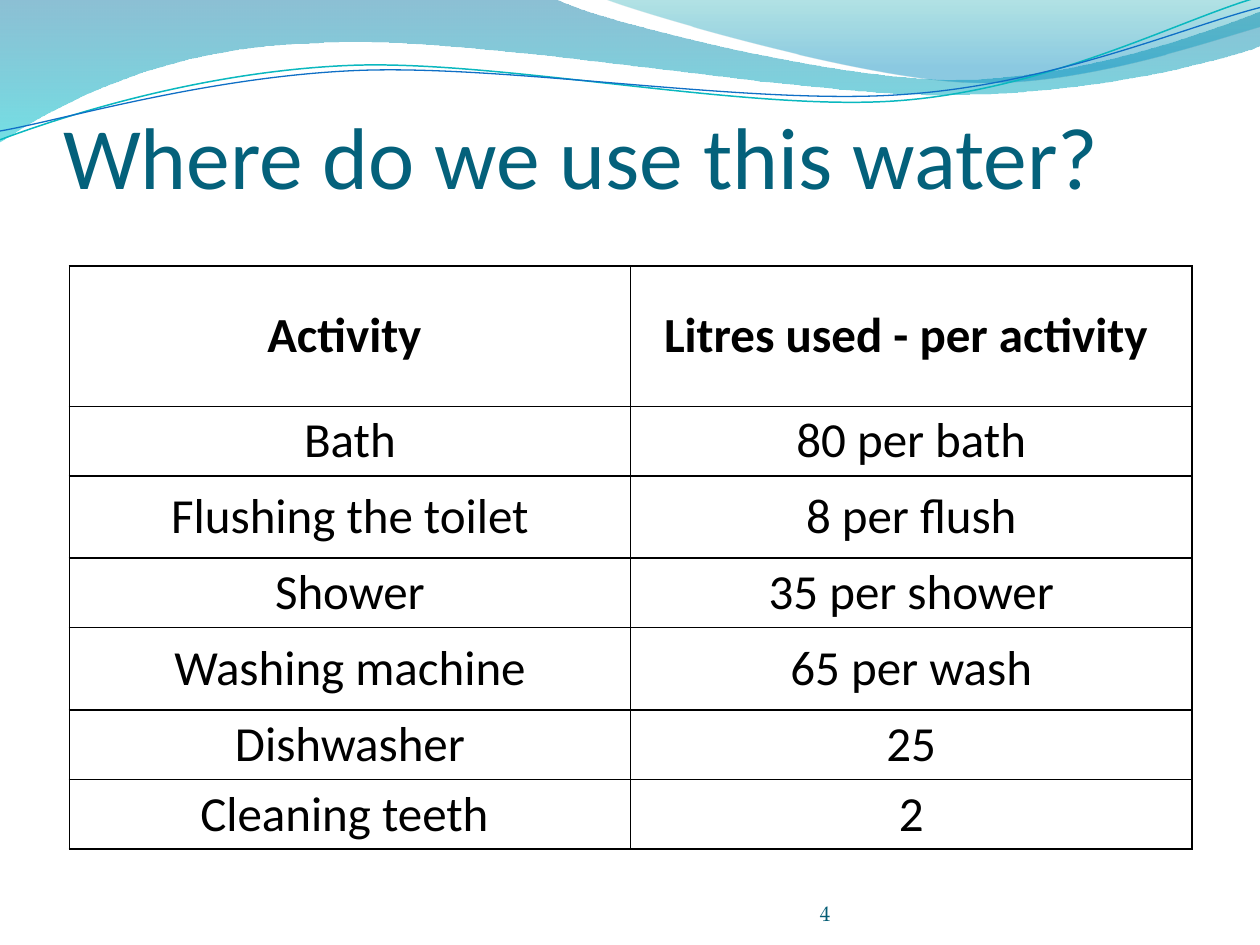
from pptx import Presentation
from pptx.dml.color import RGBColor
from pptx.enum.text import MSO_ANCHOR, MSO_AUTO_SIZE, PP_ALIGN
from pptx.oxml.ns import qn
from pptx.util import Inches, Pt
from lxml.etree import SubElement

BLACK = RGBColor(0x00, 0x00, 0x00)
TITLE_TEAL = RGBColor(0x04, 0x61, 0x7B)
NUMBER_TEAL = RGBColor(0x04, 0x5D, 0x75)
DEEP_BLUE = RGBColor(0x00, 0x74, 0xA1)
AQUA = RGBColor(0x00, 0xC6, 0xCF)
SEA_GREEN = RGBColor(0x00, 0xA1, 0xA9)
SKY_BLUE = RGBColor(0x00, 0x8B, 0xBF)
LINE_AQUA = RGBColor(0x0A, 0xB8, 0xBF)
LINE_BLUE = RGBColor(0x0F, 0x6F, 0xC6)

# Outlines in inches: a pair is a straight step, a six is a Bezier curve.
# Gradient stops: position, colour, opacity in percent.
BANDS = [
    ([(0, 0), (4.4, -0.01), (4.76, 0.17, 6.64, 0.63, 7.58, 0.63),
      (8.53, 0.63, 9.58, 0.26, 10, 0.09), (10.01, 0.36),
      (9.83, 0.44, 8.7, 0.76, 7.46, 0.75), (6.22, 0.75, 3.82, 0.28, 2.57, 0.34),
      (1.29, 0.36, 0.46, 0.83, -0.01, 1.13)],
     [(0, DEEP_BLUE, 45), (1, AQUA, 55)]),
    ([(4.79, -0.01), (5.09, 0.11, 6.82, 0.62, 7.69, 0.65),
      (8.56, 0.69, 9.61, 0.32, 10, 0.21), (10, 0)],
     [(0, SEA_GREEN, 30), (0.8, SKY_BLUE, 45)]),
]
LINES = [
    ([(0, 1.11), (0.48, 0.93, 1.58, 0.57, 2.77, 0.52),
      (3.95, 0.47, 5.93, 0.89, 7.13, 0.8), (8.33, 0.71, 9.38, 0.15, 9.98, -0.02)],
     LINE_AQUA, 0.85),
    ([(0, 1.04), (0.47, 0.96, 1.64, 0.61, 2.83, 0.56),
      (4.03, 0.51, 5.97, 0.84, 7.17, 0.75), (8.36, 0.67, 9.41, 0.21, 10, 0.06)],
     LINE_BLUE, 0.75),
]

ROWS = [
    ("Activity ", "Litres used - per activity "),
    ("Bath", "80 per bath"),
    ("Flushing the toilet", "8 per flush"),
    ("Shower", "35 per shower"),
    ("Washing machine", "65 per wash"),
    ("Dishwasher", "25"),
    ("Cleaning teeth ", "2"),
]
ROW_HEIGHTS = [1.11, 0.55, 0.65, 0.55, 0.65, 0.55, 0.55]


def add_outline(s, outline, close):
    """Build the outline through its end points, then bend the curved steps."""
    ends = [(Inches(part[-2]), Inches(part[-1])) for part in outline]
    builder = s.shapes.build_freeform(*ends[0])
    builder.add_line_segments(ends[1:], close=close)
    sp = builder.convert_to_shape()
    sp.shadow.inherit = False
    steps = list(sp.element.iter(qn("a:lnTo")))
    for step, part in zip(steps, outline[1:]):
        if len(part) == 6:
            curve = step.makeelement(qn("a:cubicBezTo"), {})
            for x, y in zip(part[::2], part[1::2]):
                SubElement(curve, qn("a:pt"), x=str(Inches(x) - sp.left),
                           y=str(Inches(y) - sp.top))
            step.getparent().replace(step, curve)
    return sp


def add_waves(s):
    # Translucent bands
    for outline, stops in BANDS:
        sp = add_outline(s, outline, True)
        sp.line.fill.background()
        sp.fill.gradient()
        sp.fill.gradient_angle = 270
        for stop, (position, color, _) in zip(sp.fill.gradient_stops, stops):
            stop.position = position
            stop.color.rgb = color
        colors = list(sp.element.spPr.iter(qn("a:srgbClr")))
        for clr, (_, _, opacity) in zip(colors, stops):
            SubElement(clr, qn("a:alpha"), val=str(opacity * 1000))
    # Thin lines
    for outline, color, width in LINES:
        sp = add_outline(s, outline, False)
        sp.fill.background()
        sp.line.color.rgb = color
        sp.line.width = Pt(width)


def set_text(tf, text, size, font, color, align, bold=False):
    p = tf.paragraphs[0]
    p.alignment = align
    r = p.add_run()
    r.text = text
    r.font.size = Pt(size)
    r.font.name = font
    r.font.color.rgb = color
    r.font.bold = bold


def set_frame(tf, anchor, top=0):
    tf.word_wrap = True
    tf.auto_size = MSO_AUTO_SIZE.NONE
    tf.vertical_anchor = anchor
    tf.margin_left = tf.margin_right = tf.margin_bottom = 0
    tf.margin_top = Inches(top)


def add_title(s, left, top, width, height):
    sp = s.shapes.title
    sp.left, sp.top, sp.width, sp.height = map(Inches, (left, top, width, height))
    s.shapes.element.append(sp.element)  # in front of the waves
    set_frame(sp.text_frame, MSO_ANCHOR.BOTTOM, top=0.05)
    set_text(sp.text_frame, "Where do we use this water?", 50, "Calibri",
             TITLE_TEAL, PP_ALIGN.LEFT)


def set_borders(cell):
    tcPr = cell._tc.get_or_add_tcPr()
    for i, side in enumerate(("lnL", "lnR", "lnT", "lnB")):
        ln = tcPr.makeelement(qn(f"a:{side}"), {"w": str(Pt(1))})
        fill = SubElement(ln, qn("a:solidFill"))
        SubElement(fill, qn("a:srgbClr"), val=str(BLACK))
        tcPr.insert(i, ln)


def add_water_table(s, left, top, width, height):
    box = map(Inches, (left, top, width, height))
    table = s.shapes.add_table(len(ROWS), 2, *box).table
    table.first_row = table.horz_banding = False
    for col in table.columns:
        col.width = Inches(width / 2)
    for i, (texts, share) in enumerate(zip(ROWS, ROW_HEIGHTS)):
        table.rows[i].height = Inches(height * share / sum(ROW_HEIGHTS))
        for cell, text in zip(table.rows[i].cells, texts):
            cell.fill.background()
            cell.vertical_anchor = MSO_ANCHOR.MIDDLE
            cell.margin_left = cell.margin_right = 0
            cell.margin_top = cell.margin_bottom = 0
            set_text(cell.text_frame, text, 28, "Calibri", BLACK,
                     PP_ALIGN.CENTER, bold=i == 0)
            set_borders(cell)


def add_slide_number(s, left, top, width, height):
    tf = s.shapes.add_textbox(*map(Inches, (left, top, width, height))).text_frame
    set_frame(tf, MSO_ANCHOR.BOTTOM)
    set_text(tf, "4", 12, "TeX Gyre Pagella", NUMBER_TEAL, PP_ALIGN.RIGHT)


def main():
    prs = Presentation()
    prs.slide_width, prs.slide_height = Inches(10), Inches(7.5)
    s = prs.slides.add_slide(prs.slide_layouts[5])
    add_waves(s)
    add_title(s, 0.5, 0.39, 9, 1.25)
    add_water_table(s, 0.55, 2.11, 8.91, 4.63)
    add_slide_number(s, 2.92, 6.95, 3.67, 0.4)
    prs.save("out.pptx")


if __name__ == "__main__":
    main()
